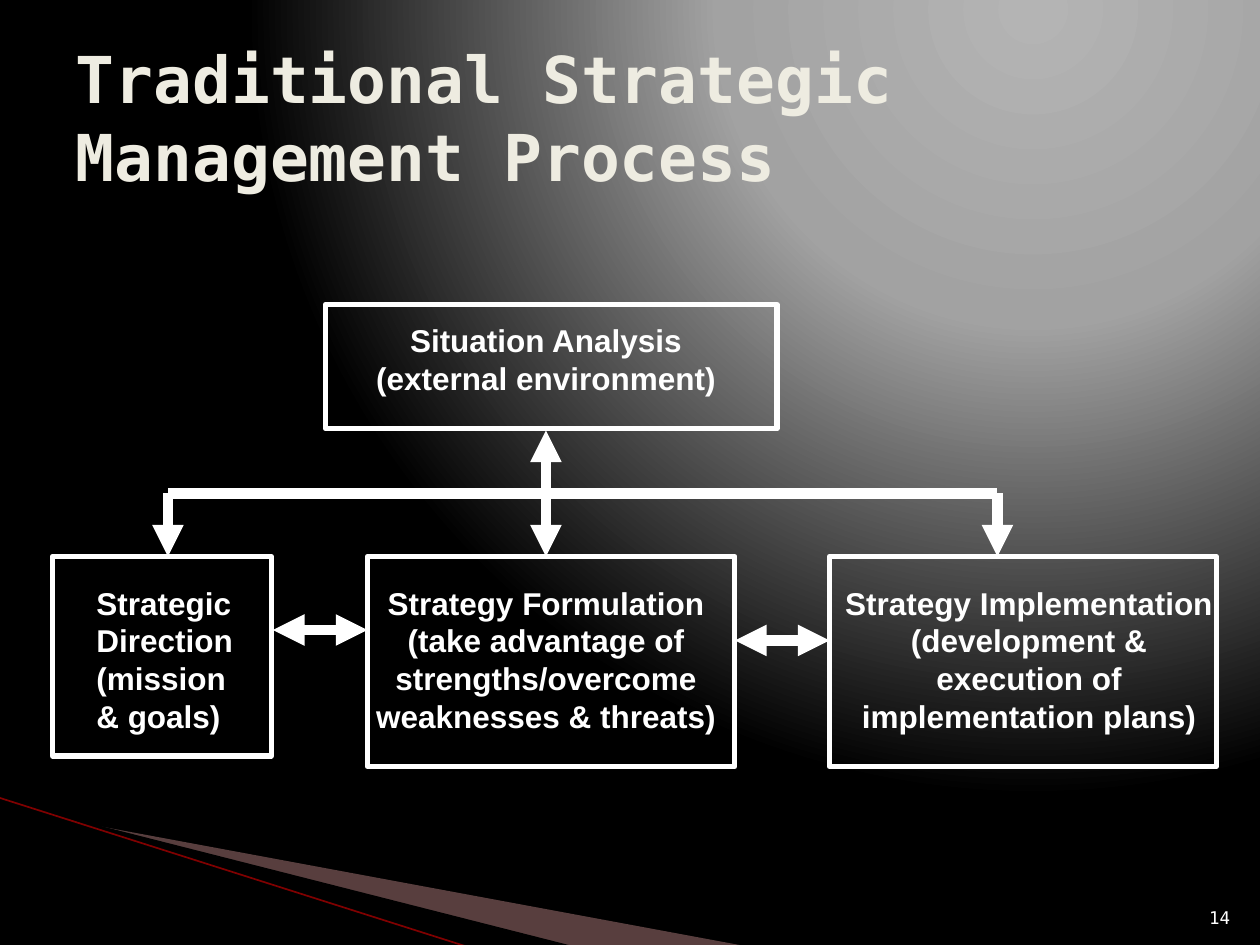
from lxml import etree
from pptx import Presentation
from pptx.dml.color import RGBColor
from pptx.enum import shapes as shp, text as txt
from pptx.oxml import parse_xml
from pptx.oxml.ns import nsdecls, qn
from pptx.util import Pt

WHITE = RGBColor(0xFF, 0xFF, 0xFF)
BLACK = RGBColor(0, 0, 0)
CREAM = RGBColor(0xEE, 0xEC, 0xE1)
ROSE = RGBColor(0xDD, 0x9D, 0x9D)
DARK_RED = RGBColor(0x80, 0, 0)
GLOW = [(0, RGBColor(0xB4, 0xB4, 0xB4)), (40, RGBColor(0xA2, 0xA2, 0xA2)), (100, BLACK)]
MONO, SANS = "DejaVu Sans Mono", "Arial"

LABEL_FONT = {"name": SANS, "size": Pt(18), "bold": True}
TITLE_FONT = {"name": MONO, "size": Pt(36.9), "bold": True}
NUMBER_FONT = {"name": MONO, "size": Pt(10), "bold": False}
FRAME_FORMAT = {"word_wrap": True, "auto_size": txt.MSO_AUTO_SIZE.NONE,
                "margin_left": Pt(7.2), "margin_right": Pt(7.2),
                "margin_top": Pt(3.6), "margin_bottom": Pt(3.6)}


def apply(target, values):
    for name, value in values.items():
        setattr(target, name, value)


def write(frame, lines, font, color, align, anchor):
    apply(frame, {**FRAME_FORMAT, "vertical_anchor": anchor})
    frame.text = "\n".join(lines)
    for paragraph in frame.paragraphs:
        paragraph.alignment = align
        apply(paragraph.font, font)
        paragraph.font.color.rgb = color


def add_text(slide, box, *style):
    write(slide.shapes.add_textbox(*map(Pt, box)).text_frame, *style)


def add_line(slide, start, end, color=WHITE, width=6, heads=()):
    line = slide.shapes.add_connector(shp.MSO_CONNECTOR.STRAIGHT, *map(Pt, (*start, *end)))
    line.line.color.rgb = color
    line.line.width = Pt(width)
    ln = line.line._get_or_add_ln()
    for end_tag in heads:
        etree.SubElement(ln, qn(end_tag), type="triangle")
    etree.SubElement(line._element.spPr, qn("a:effectLst"))


def add_wedge(slide, points, color, opacity=100):
    start, *rest = [tuple(map(Pt, point)) for point in points]
    builder = slide.shapes.build_freeform(*start)
    builder.add_line_segments(rest, close=True)
    wedge = builder.convert_to_shape()
    wedge.shadow.inherit = False
    wedge.fill.solid()
    wedge.fill.fore_color.rgb = color
    wedge.line.fill.background()
    if opacity < 100:
        clr = wedge._element.spPr.find(".//" + qn("a:srgbClr"))
        etree.SubElement(clr, qn("a:alpha"), val=str(opacity * 1000))


def paint_background(slide):
    slide.background.fill.solid()
    fill = slide.element.find(".//" + qn("p:bgPr")).find(qn("a:solidFill"))
    stops = "".join(f'<a:gs pos="{pos * 1000}"><a:srgbClr val="{color}"/></a:gs>'
                    for pos, color in GLOW)
    fill.getparent().replace(fill, parse_xml(
        f'<a:gradFill {nsdecls("a")} rotWithShape="1"><a:gsLst>{stops}</a:gsLst>'
        '<a:path path="circle"><a:fillToRect l="65000" t="0" r="0" b="98000"/></a:path>'
        '</a:gradFill>'))


def draw_corner(slide, box):
    """Wedges and thin line at the bottom left."""
    left, top, width, height = box
    bottom = top + height
    add_wedge(slide, [(left + 40, top + 13), (left + width, bottom),
                      (left + 328, bottom), (left + 40, top + 12)], ROSE, 40)
    add_wedge(slide, [(left + 38, top + 11), (left + 329, bottom),
                      (left + 268, bottom), (left + 39, top + 12)], BLACK)
    add_line(slide, (left, top), (left + 267, bottom), DARK_RED, 0.95)


def draw_title(slide, box):
    title = slide.shapes.title
    apply(title, dict(zip(("left", "top", "width", "height"), map(Pt, box))))
    write(title.text_frame, ["Traditional Strategic Management Process"], TITLE_FONT,
          CREAM, txt.PP_ALIGN.LEFT, txt.MSO_ANCHOR.MIDDLE)


def draw_stage(slide, box, label_box, lines, align=txt.PP_ALIGN.CENTER):
    """Outlined rectangle with its label."""
    stage = slide.shapes.add_shape(shp.MSO_SHAPE.RECTANGLE, *map(Pt, box))
    stage.shadow.inherit = False
    stage.fill.background()
    stage.line.color.rgb = WHITE
    stage.line.width = Pt(3)
    add_text(slide, label_box, lines, LABEL_FONT, WHITE, align, txt.MSO_ANCHOR.TOP)


def draw_process(slide, box):
    left, top, width, height = box
    row, label_row = top + 144, top + 156
    # Stages
    draw_stage(slide, (left + 156, top, 258, 71), (left + 174, top + 6, 216, 50),
               ["Situation Analysis", "(external environment)"])
    draw_stage(slide, (left, row, 125, 114), (left + 18, label_row, 102, 94),
               ["Strategic", "Direction", "(mission & goals)"], txt.PP_ALIGN.LEFT)
    draw_stage(slide, (left + 180, row, 210, 120), (left + 174, label_row, 216, 94),
               ["Strategy Formulation",
                "(take advantage of strengths/overcome weaknesses & threats)"])
    draw_stage(slide, (left + width - 221, row, 221, 120),
               (left + width - 221, label_row, 228, 94),
               ["Strategy Implementation",
                "(development & execution of implementation plans)"])

    # Branches from the analysis down to the three stages
    both, end = ("a:headEnd", "a:tailEnd"), ("a:tailEnd",)
    bar, first, middle, last = top + 108, left + 66, left + 282, left + 540
    add_line(slide, (first, bar), (last, bar))
    for x in (first, last):
        add_line(slide, (x, bar), (x, row), heads=end)
    add_line(slide, (middle, top + 72), (middle, row), heads=both)

    # Links between neighbouring stages
    for x, y in ((left + 126, row + 42), (left + 390, row + 48)):
        add_line(slide, (x, y), (x + 54, y), heads=both)


def draw_number(slide, box):
    add_text(slide, box, ["14"], NUMBER_FONT, WHITE,
             txt.PP_ALIGN.RIGHT, txt.MSO_ANCHOR.BOTTOM)


def main():
    deck = Presentation()
    deck.slide_width, deck.slide_height = Pt(720), Pt(540)
    slide = deck.slides.add_slide(deck.slide_layouts[5])
    paint_background(slide)
    draw_corner(slide, (0, 456, 428, 85))
    draw_title(slide, (36, 21.6, 648, 90))
    draw_process(slide, (30, 174, 665, 264))
    draw_number(slide, (681, 505, 29, 29))
    deck.save("out.pptx")


if __name__ == "__main__":
    main()
